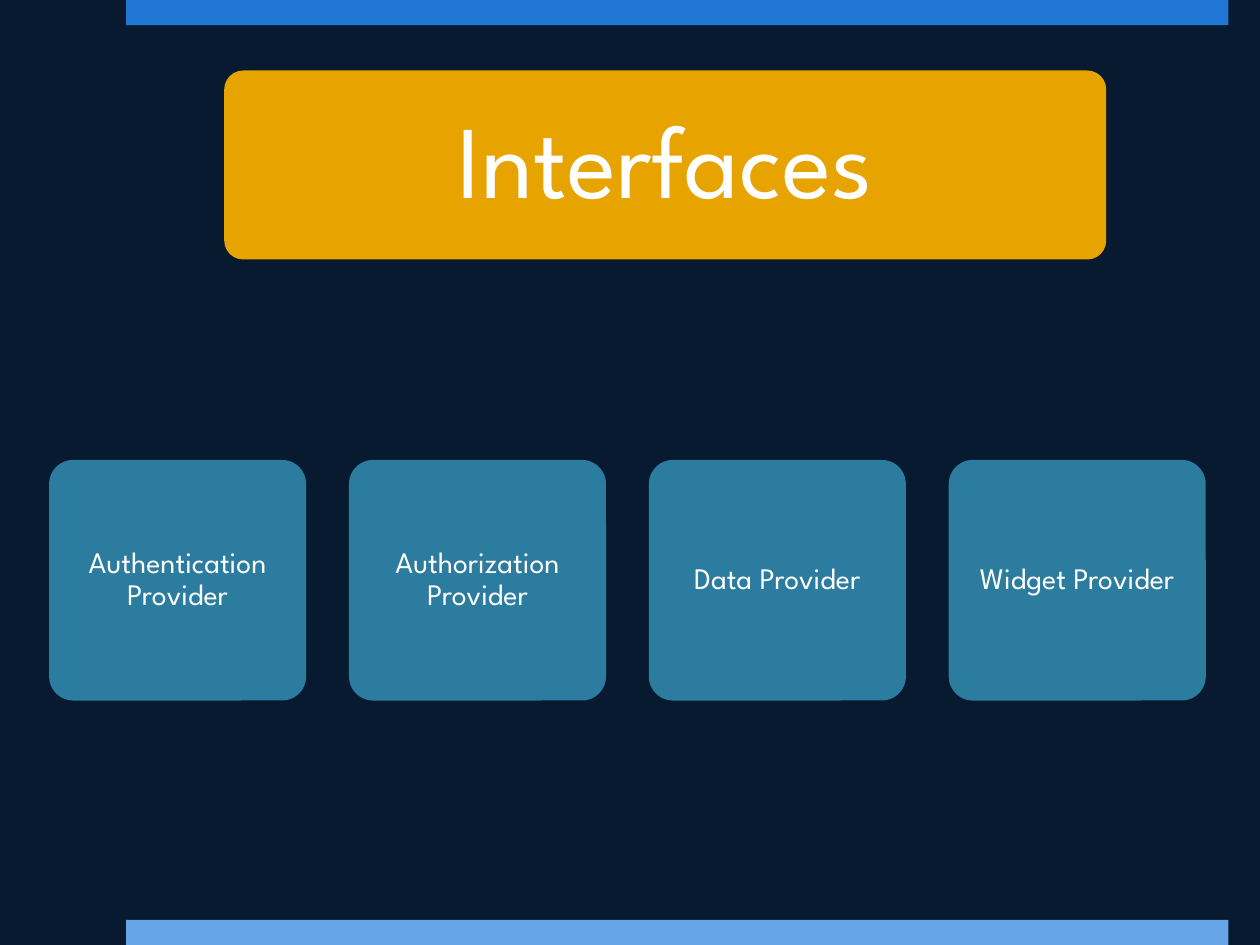
from pptx import Presentation
from pptx.dml.color import RGBColor
from pptx.enum.shapes import MSO_SHAPE
from pptx.enum.text import MSO_ANCHOR, PP_ALIGN
from pptx.util import Inches, Pt

RECTANGLE = MSO_SHAPE.RECTANGLE
ROUNDED = MSO_SHAPE.ROUNDED_RECTANGLE
MIDDLE = MSO_ANCHOR.MIDDLE
CENTER = PP_ALIGN.CENTER

TITLE = "Interfaces"
PROVIDERS = [
    "Authentication Provider",
    "Authorization Provider",
    "Data Provider",
    "Widget Provider",
]
COLORS = {
    "background": "071A2F",
    "top_bar": "2077D4",
    "bottom_bar": "66A4E8",
    "title": "E7A300",
    "provider": "2C7C9F",
    "text": "FFFFFF",
}
FONT = "League Spartan"
SLIDE_WIDTH, SLIDE_HEIGHT = 10, 7.5
BAR_LEFT, BAR_WIDTH, BAR_HEIGHT = 1, 8.75, 0.2
CARD_LEFT, CARD_TOP, CARD_WIDTH, CARD_HEIGHT = 0.39, 3.65, 2.04, 1.91
CARD_STEP = 2.38


def color(name):
    return RGBColor.from_string(COLORS[name])


def add_block(slide, kind, area, fill):
    block = slide.shapes.add_shape(kind, *(Inches(length) for length in area))
    block.shadow.inherit = False
    block.fill.solid()
    block.fill.fore_color.rgb = color(fill)
    block.line.fill.background()
    return block


def add_card(slide, area, fill, text, size, inset):
    """Add a rounded box with one centred paragraph."""
    card = add_block(slide, ROUNDED, area, fill)
    card.adjustments[0] = 0.1
    frame = card.text_frame
    frame.word_wrap = True
    frame.vertical_anchor = MIDDLE
    frame.margin_left = frame.margin_right = Inches(inset)
    frame.margin_top = frame.margin_bottom = Inches(inset)
    paragraph = frame.paragraphs[0]
    paragraph.text = text
    paragraph.alignment = CENTER
    paragraph.line_spacing = 0.9
    paragraph.font.name = FONT
    paragraph.font.size = Pt(size)
    paragraph.font.color.rgb = color("text")


def main():
    deck = Presentation()
    deck.slide_width = Inches(SLIDE_WIDTH)
    deck.slide_height = Inches(SLIDE_HEIGHT)
    slide = deck.slides.add_slide(deck.slide_layouts[6])
    slide.background.fill.solid()
    slide.background.fill.fore_color.rgb = color("background")

    for top, fill in ((0, "top_bar"), (SLIDE_HEIGHT - BAR_HEIGHT, "bottom_bar")):
        add_block(slide, RECTANGLE, (BAR_LEFT, top, BAR_WIDTH, BAR_HEIGHT), fill)

    for index, provider in enumerate(PROVIDERS):
        left = CARD_LEFT + index * CARD_STEP
        area = (left, CARD_TOP, CARD_WIDTH, CARD_HEIGHT)
        add_card(slide, area, "provider", provider, 17, 0.07)

    add_card(slide, (1.78, 0.56, 7, 1.5), "title", TITLE, 59, 0.25)
    deck.save("out.pptx")


if __name__ == "__main__":
    main()
